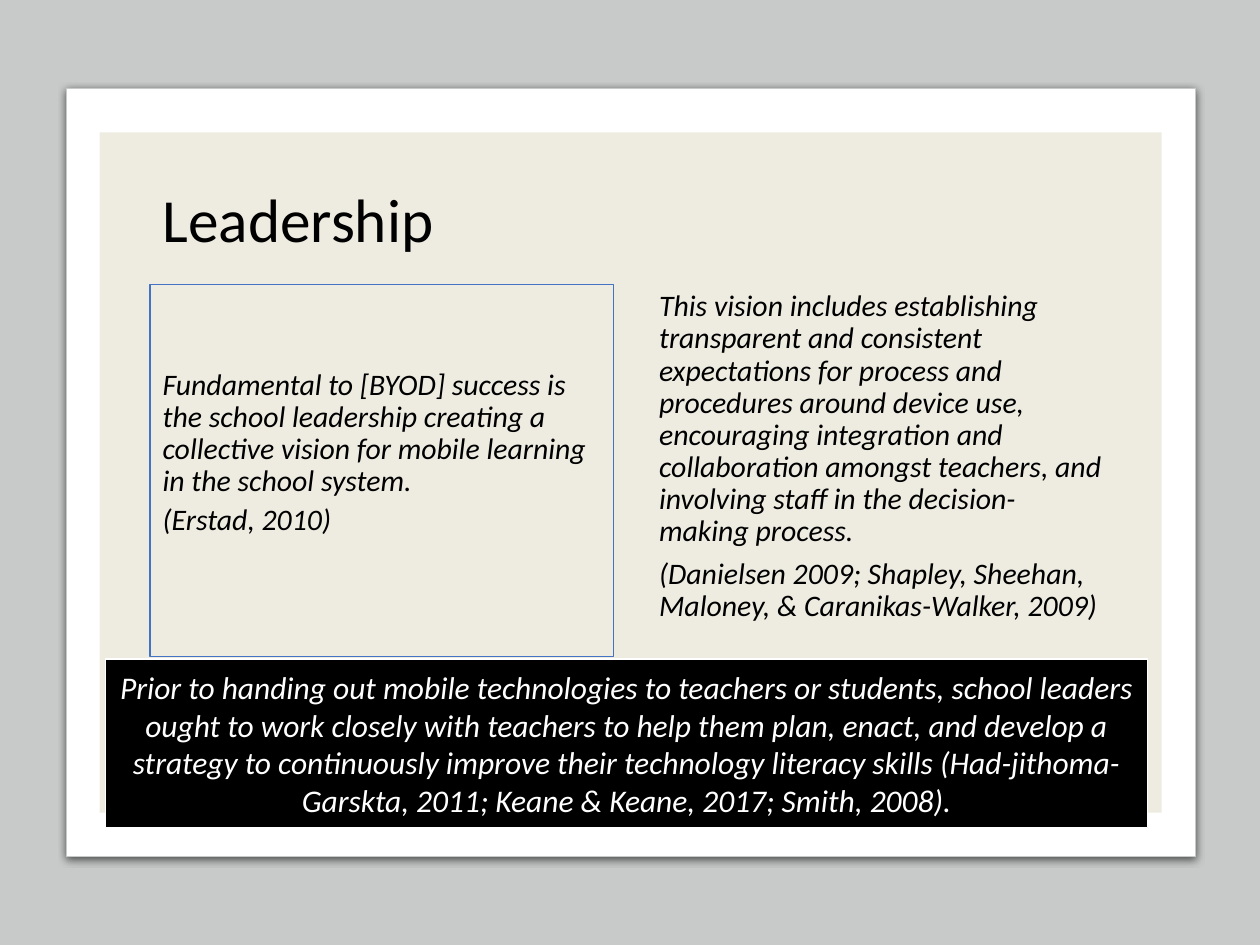
"""Build the Leadership slide with two quotes and a closing banner."""
from dataclasses import dataclass
from typing import Optional

from lxml.etree import SubElement
from pptx import Presentation
from pptx.dml.color import RGBColor
from pptx.enum.shapes import MSO_SHAPE as Kind
from pptx.enum.text import MSO_ANCHOR as Anchor, MSO_AUTO_SIZE as Fit, PP_ALIGN as Align
from pptx.oxml import parse_xml
from pptx.oxml.ns import nsdecls, qn
from pptx.util import Pt

WIDE, HIGH = 720, 540
LEFT, TOP = 85.7, 162.7
INK, PAPER, GREY, CREAM, BLUE = "000000", "FFFFFF", "C8CACA", "EEECE1", "4472C4"


@dataclass
class Box:
    """A place on the slide, in points."""
    x: float
    y: float
    w: float
    h: float


@dataclass
class Panel:
    """A filled rectangle with an optional outline and shadow."""
    box: Box
    fill: str
    line: Optional[str] = None
    shade: bool = False


@dataclass
class Prose:
    """Wording and its paragraph format."""
    text: str
    size: float
    color: str = INK
    slant: bool = True
    lines: float = 0.9
    before: float = 0
    after: float = 0
    align: Align = Align.LEFT
    anchor: Anchor = Anchor.TOP
    inset: float = 3.6


def tint(code: str) -> RGBColor:
    """Turn a hex string into a colour."""
    return RGBColor.from_string(code)


def place(shape, box: Box) -> None:
    """Move and size a shape."""
    shape.left, shape.top = Pt(box.x), Pt(box.y)
    shape.width, shape.height = Pt(box.w), Pt(box.h)


def edge(shape, color: str) -> None:
    """Give a shape a thin outline."""
    shape.line.color.rgb = tint(color)
    shape.line.width = Pt(0.75)


def cast(shape) -> None:
    """Give a shape a soft shadow below it."""
    props = shape._element.spPr
    for old in props.findall(qn("a:effectLst")):
        props.remove(old)
    props.append(parse_xml(
        f'<a:effectLst {nsdecls("a")}><a:outerShdw blurRad="{Pt(4.5)}" dist="{Pt(1.5)}" '
        'dir="5400000" algn="t" rotWithShape="0"><a:srgbClr val="000000">'
        '<a:alpha val="63000"/></a:srgbClr></a:outerShdw></a:effectLst>'))


def draw(slide, panel: Panel):
    """Add a panel to the slide."""
    shape = slide.shapes.add_shape(Kind.RECTANGLE, 0, 0, 0, 0)
    place(shape, panel.box)
    shape.shadow.inherit = False
    shape.fill.solid()
    shape.fill.fore_color.rgb = tint(panel.fill)
    if panel.line:
        edge(shape, panel.line)
    else:
        shape.line.fill.background()
    if panel.shade:
        cast(shape)
    return shape


def write(shape, prose: Prose) -> None:
    """Fill a shape with formatted text and no bullets."""
    frame = shape.text_frame
    frame.text = prose.text
    frame.word_wrap = True
    frame.auto_size = Fit.NONE
    frame.vertical_anchor = prose.anchor
    frame.margin_top = Pt(prose.inset)
    for i, para in enumerate(frame.paragraphs):
        para.alignment = prose.align
        para.line_spacing = prose.lines
        para.space_before = Pt(prose.before if i else 0)
        para.space_after = Pt(prose.after)
        props = para._p.get_or_add_pPr()
        props.set("marL", "0")
        props.set("indent", "0")
        SubElement(props, qn("a:buNone"))
        for run in para.runs:
            font = run.font
            font.name, font.size, font.italic = "Calibri", Pt(prose.size), prose.slant
            font.color.rgb = tint(prose.color)


def main() -> None:
    """Build and save the slide."""
    deck = Presentation()
    deck.slide_width, deck.slide_height = Pt(WIDE), Pt(HIGH)
    slide = deck.slides.add_slide(deck.slide_layouts[3])
    title, vision, policy = list(slide.placeholders)[:3]

    back = [
        Panel(Box(0, 0, WIDE, HIGH), GREY),
        Panel(Box(38.2, 50.4, 645, 439.2), PAPER, GREY, True),
        Panel(Box(56.9, 75.6, 607, 388.8), CREAM),
    ]
    tree = slide.shapes._spTree
    for i, panel in enumerate(back):
        tree.insert(2 + i, draw(slide, panel)._element)

    place(title, Box(LEFT, 86.4, 553, 82.1))
    write(title, Prose("Leadership", 35, slant=False, anchor=Anchor.MIDDLE))

    place(vision, Box(LEFT, TOP, 265, 212.4))
    edge(vision, BLUE)
    write(vision, Prose(
        "Fundamental to [BYOD] success is the school leadership creating a collective "
        "vision for mobile learning in the school system.\n(Erstad, 2010)",
        17, before=3.4, inset=48.6))

    place(policy, Box(369.4, TOP, 269.3, 212.4))
    write(policy, Prose(
        "This vision includes establishing transparent and consistent expectations for "
        "process and procedures around device use, encouraging integration and "
        "collaboration amongst teachers, and involving staff in the decision-making "
        "process.\n(Danielsen 2009; Shapley, Sheehan, Maloney, & Caranikas-Walker, 2009)",
        17, after=6))

    banner = draw(slide, Panel(Box(60.5, 376.6, 595.4, 96.5), INK, PAPER))
    write(banner, Prose(
        "Prior to handing out mobile technologies to teachers or students, school leaders "
        "ought to work closely with teachers to help them plan, enact, and develop a "
        "strategy to continuously improve their technology literacy skills "
        "(Had-jithoma-Garskta, 2011; Keane & Keane, 2017; Smith, 2008).",
        18, PAPER, lines=1, align=Align.CENTER, anchor=Anchor.MIDDLE))

    deck.save("out.pptx")


if __name__ == "__main__":
    main()
